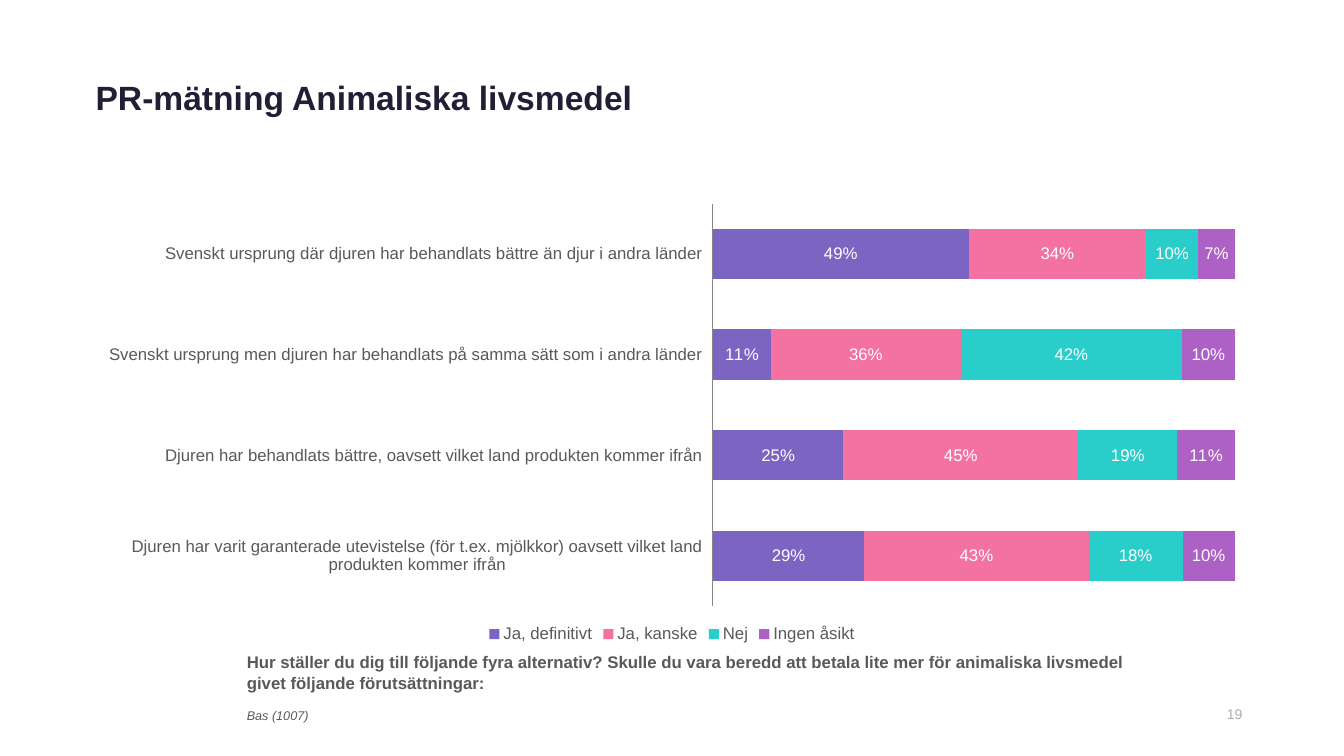
from lxml import etree
from pptx import Presentation
from pptx.chart.data import CategoryChartData
from pptx.dml.color import RGBColor
from pptx.enum.chart import (XL_CHART_TYPE, XL_LABEL_POSITION, XL_LEGEND_POSITION,
                             XL_TICK_LABEL_POSITION, XL_TICK_MARK)
from pptx.enum.text import MSO_ANCHOR, PP_ALIGN
from pptx.oxml import parse_xml
from pptx.oxml.ns import nsdecls, qn
from pptx.util import Pt

PX = 9144
NAVY = RGBColor(0x24, 0x1D, 0x36)
PLUM = RGBColor(0x33, 0x2C, 0x41)
GREY = RGBColor(0x59, 0x59, 0x59)
AXIS_GREY = RGBColor(0x86, 0x86, 0x86)
WHITE = RGBColor(0xFF, 0xFF, 0xFF)
VIOLET = RGBColor(0x7C, 0x64, 0xC3)
PINK = RGBColor(0xF3, 0x72, 0xA1)
TURQUOISE = RGBColor(0x29, 0xCD, 0xCA)
PURPLE = RGBColor(0xAE, 0x61, 0xC4)

QUESTION = ("Hur ställer du dig till följande fyra alternativ? Skulle du vara beredd att betala "
            "lite mer för animaliska livsmedel givet följande förutsättningar:")
CATEGORIES = [
    "Svenskt ursprung där djuren har behandlats bättre än djur i andra länder",
    "Svenskt ursprung men djuren har behandlats på samma sätt som i andra länder",
    "Djuren har behandlats bättre, oavsett vilket land produkten kommer ifrån",
    "Djuren har varit garanterade utevistelse (för t.ex. mjölkkor) oavsett vilket land "
    "produkten kommer ifrån",
]
ANSWERS = [
    ("Ja, definitivt", VIOLET, (0.49, 0.11, 0.25, 0.29)),
    ("Ja, kanske", PINK, (0.34, 0.36, 0.45, 0.43)),
    ("Nej", TURQUOISE, (0.10, 0.42, 0.19, 0.18)),
    ("Ingen åsikt", PURPLE, (0.07, 0.10, 0.11, 0.10)),
]
PLOT_AREA = {"x": 0.535, "y": 0.02, "w": 0.445, "h": 0.89}


def assign(target, values):
    for name, value in values.items():
        setattr(target, name, value)


class SlideBuilder:
    font_name = "Arial"

    def __init__(self, presentation):
        self.slide = presentation.slides.add_slide(presentation.slide_layouts[6])

    def style(self, font, size, color, **values):
        assign(font, {"name": self.font_name, "size": Pt(size), "bold": False, **values})
        font.color.rgb = color

    def text(self, box, text, size, color, align=PP_ALIGN.LEFT, anchor=MSO_ANCHOR.TOP,
             opacity=None, **values):
        shape = self.slide.shapes.add_textbox(*(length * PX for length in box))
        assign(shape.text_frame, {"word_wrap": True, "vertical_anchor": anchor})
        paragraph = shape.text_frame.paragraphs[0]
        paragraph.alignment = align
        run = paragraph.add_run()
        run.text = text
        self.style(run.font, size, color, **values)
        if opacity:
            color_element = next(run.font.fill._xPr.iter(qn("a:srgbClr")))
            etree.SubElement(color_element, qn("a:alpha")).set("val", str(opacity * 1000))

    def stacked_bars(self, box, categories, answers, plot_area):
        chart_data = CategoryChartData(number_format="0%")
        chart_data.categories = categories
        for name, _, values in answers:
            chart_data.add_series(name, values)
        chart = self.slide.shapes.add_chart(
            XL_CHART_TYPE.BAR_STACKED_100, *(length * PX for length in box), chart_data).chart
        assign(chart, {"has_title": False, "has_legend": True})
        self.style(chart.font, 12, GREY)
        assign(chart.legend, {"position": XL_LEGEND_POSITION.BOTTOM, "include_in_layout": False})
        self.style(chart.legend.font, 12, GREY)

        plot = chart.plots[0]
        assign(plot, {"gap_width": 100, "overlap": 100, "vary_by_categories": False})
        for series, (_, color, _) in zip(plot.series, answers):
            series.format.fill.solid()
            series.format.fill.fore_color.rgb = color
            labels = series.data_labels
            assign(labels, {"show_value": True, "number_format": "0%",
                            "number_format_is_linked": False,
                            "position": XL_LABEL_POSITION.CENTER})
            self.style(labels.font, 12, WHITE)

        axis = chart.category_axis
        assign(axis, {"reverse_order": True, "has_major_gridlines": False,
                      "major_tick_mark": XL_TICK_MARK.NONE,
                      "minor_tick_mark": XL_TICK_MARK.NONE,
                      "tick_label_position": XL_TICK_LABEL_POSITION.LOW})
        axis.format.line.width = Pt(0.75)
        axis.format.line.color.rgb = AXIS_GREY
        self.style(axis.tick_labels.font, 12, GREY)
        assign(chart.value_axis, {"visible": False, "has_major_gridlines": False,
                                  "minimum_scale": 0, "maximum_scale": 1, "major_unit": 0.1})
        self.place_plot(chart, plot_area)

    def place_plot(self, chart, plot_area):
        sizes = "".join(f'<c:{key} val="{value}"/>' for key, value in plot_area.items())
        layout = parse_xml(
            f'<c:layout {nsdecls("c")}><c:manualLayout><c:layoutTarget val="inner"/>'
            f'<c:xMode val="edge"/><c:yMode val="edge"/>{sizes}</c:manualLayout></c:layout>')
        plot_element = next(chart.element.iter(qn("c:plotArea")))
        for old_layout in plot_element.findall(qn("c:layout")):
            plot_element.remove(old_layout)
        plot_element.insert(0, layout)


def main():
    presentation = Presentation()
    assign(presentation, {"slide_width": 1333 * PX, "slide_height": 750 * PX})
    builder = SlideBuilder(presentation)
    builder.text((1178, 695, 64, 27), "19", 10, PLUM, PP_ALIGN.RIGHT, MSO_ANCHOR.MIDDLE,
                 opacity=40)
    builder.text((85, 71, 1163, 50), "PR-mätning Animaliska livsmedel", 24, NAVY,
                 anchor=MSO_ANCHOR.MIDDLE, bold=True)
    builder.text((235, 642, 933, 47), QUESTION, 12, GREY, bold=True)
    builder.text((235, 697, 933, 27), "Bas (1007)", 9, GREY, italic=True)
    builder.stacked_bars((85, 193, 1163, 449), CATEGORIES, ANSWERS, PLOT_AREA)
    presentation.save("out.pptx")


if __name__ == "__main__":
    main()
